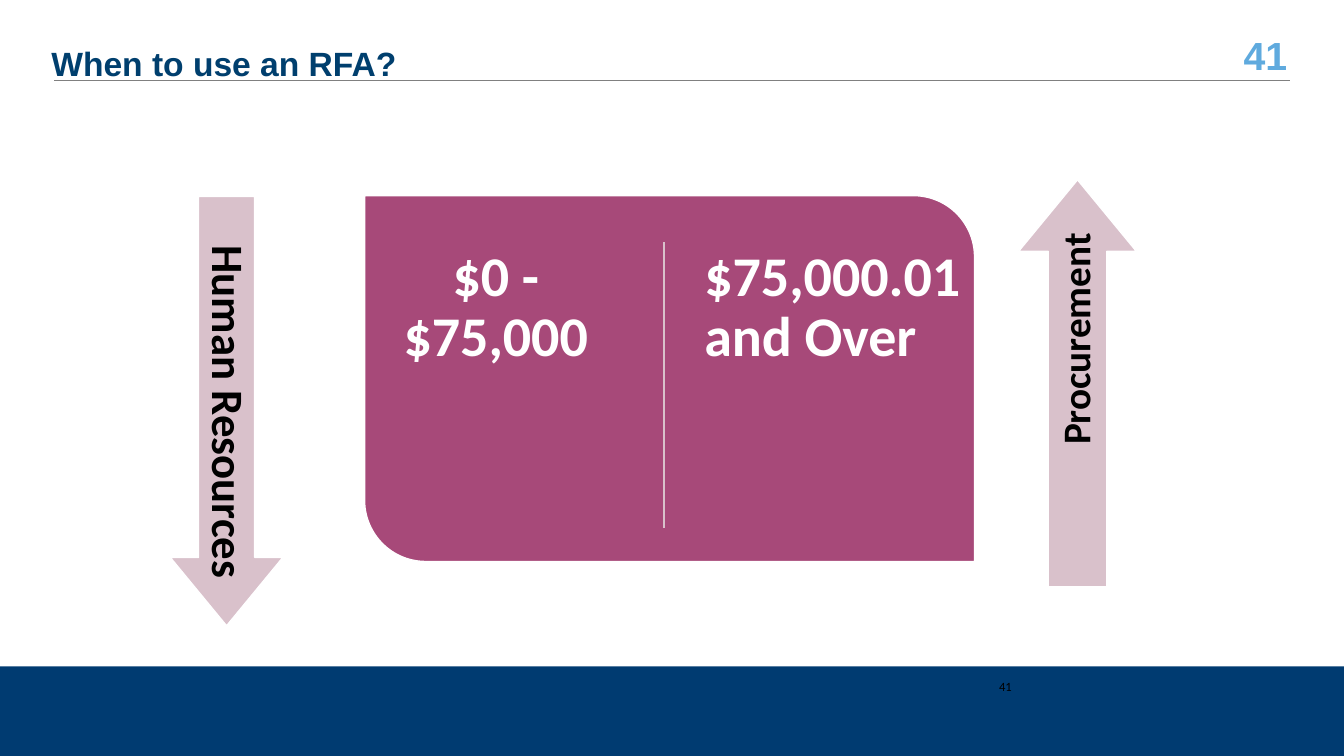
import pptx
import pptx.util
import pptx.dml.color
import pptx.enum.shapes
import pptx.enum.text
import pptx.oxml

Cm = pptx.util.Cm
Pt = pptx.util.Pt
Kind = pptx.enum.shapes.MSO_SHAPE
Align = pptx.enum.text.PP_ALIGN
Anchor = pptx.enum.text.MSO_ANCHOR

NAVY, PLUM, MAUVE = "003B71", "A74979", "D9C1CB"
WHITE, BLACK = "FFFFFF", "000000"


def color(code):
    """Turn a hex string into a colour."""
    return pptx.dml.color.RGBColor.from_string(code)


def set_all(thing, values):
    """Set each attribute named in a dict."""
    for name, value in values.items():
        setattr(thing, name, value)


def add_shape(slide, kind, box, fill, edge=None, bends=()):
    """Add a filled preset shape in a box given in centimetres."""
    shape = slide.shapes.add_shape(kind, *map(Cm, box))
    shape.shadow.inherit = False
    shape.fill.solid()
    shape.fill.fore_color.rgb = color(fill)
    if edge:
        shape.line.color.rgb = color(edge)
        shape.line.width = Pt(1)
    else:
        shape.line.fill.background()
    for place, bend in enumerate(bends):
        shape.adjustments[place] = bend
    return shape


def add_line(slide, start, end, ink, width):
    """Add a straight line between two points in centimetres."""
    line = slide.shapes.add_connector(
        pptx.enum.shapes.MSO_CONNECTOR.STRAIGHT, *map(Cm, start + end))
    line.line.color.rgb = color(ink)
    line.line.width = Pt(width)
    props = line._element.spPr
    props.append(pptx.oxml.parse_xml(
        '<a:effectLst xmlns:a="http://schemas.openxmlformats.org/drawingml/2006/main"/>'))


def add_text(slide, box, words, size, ink, align, font="Calibri", bold=True,
             anchor=Anchor.MIDDLE, inset=(0.25, 0.13, 0.25, 0.13), space=0.9):
    """Add a wrapped text box with one paragraph."""
    label = slide.shapes.add_textbox(*map(Cm, box))
    left, top, right, bottom = map(Cm, inset)
    set_all(label.text_frame, {
        "word_wrap": True, "vertical_anchor": anchor, "margin_left": left,
        "margin_top": top, "margin_right": right, "margin_bottom": bottom})
    para = label.text_frame.paragraphs[0]
    set_all(para, {"alignment": align, "line_spacing": space})
    run = para.add_run()
    run.text = words
    set_all(run.font, {"name": font, "size": Pt(size), "bold": bold})
    run.font.color.rgb = color(ink)
    return label


def add_header(slide, box):
    """Place the title, the large page number and the rule below them."""
    x, y, w, h = box
    add_text(slide, (x + w - 1.85, y + 0.46, 2.03, 1.07), "41", 28, "5FAADE",
             Align.RIGHT, "Arial", space=1)
    add_line(slide, (x, y + h), (x + w, y + h), "808080", 0.5)
    add_text(slide, (x - 4.6, y, 17.75, 2.54), "When to use an RFA?", 24,
             "003F6E", Align.CENTER, "Arial")


def add_footer(slide, box):
    """Place the bottom band and its small page number."""
    x, y, w, h = box
    add_shape(slide, Kind.RECTANGLE, box, NAVY)
    add_text(slide, (x + 23.88, y, 1.9, 1.02), "41", 9, BLACK, Align.RIGHT,
             bold=False, space=1)


def add_panel(slide, box):
    """Place the panel with two amounts and the divider between them."""
    x, y, w, h = box
    add_shape(slide, Kind.ROUND_2_DIAG_RECTANGLE, box, PLUM, WHITE, (0, 0.167))
    middle = x + 7.54
    add_line(slide, (middle, y + 1.17), (middle, y + 8.38), MAUVE, 1)
    for shift, words, align in ((-0.38, "$0 - $75,000", Align.CENTER),
                                (8.13, "$75,000.01 and Over", Align.LEFT)):
        add_text(slide, (x + shift, y + 0.89, 7.37, 7.77), words, 40, WHITE,
                 align, anchor=Anchor.TOP, inset=(0.43,) * 4)


def add_arrow(slide, box, turn, words, size, gap):
    """Fill an upright box with a turned arrow and a label set from its tail."""
    x, y, w, h = box
    mid_x, mid_y = x + w / 2, y + h / 2
    long, thick = 0.92 * h, w / 2
    toward = 1 if turn == 90 else -1
    text_y = mid_y - toward * (h - long) / 2
    arrow = add_shape(slide, Kind.RIGHT_ARROW, (mid_x - h / 2, mid_y - w / 2, h, w),
                      MAUVE, WHITE, (0.498, 0.607))
    label = add_text(slide, (mid_x - long / 2, text_y - thick / 2, long, thick),
                     words, size, BLACK, Align.RIGHT, inset=(0.32, 0.32, gap, 0.32))
    arrow.rotation = label.rotation = turn


def main():
    """Build the slide and save it."""
    deck = pptx.Presentation()
    set_all(deck, {"slide_width": Cm(33.87), "slide_height": Cm(19.05)})
    slide = deck.slides.add_slide(deck.slide_layouts[6])
    add_footer(slide, (-0.03, 16.79, 33.9, 2.41))
    add_header(slide, (1.37, 0.38, 31.14, 1.65))
    add_panel(slide, (9.19, 4.93, 15.37, 9.22))
    add_arrow(slide, (4.29, 4.95, 2.84, 10.82), 90, "Human Resources", 32, 0.33)
    add_arrow(slide, (25.67, 4.53, 2.97, 10.26), 270, "Procurement", 28, 0.53)
    deck.save("out.pptx")


if __name__ == "__main__":
    main()
